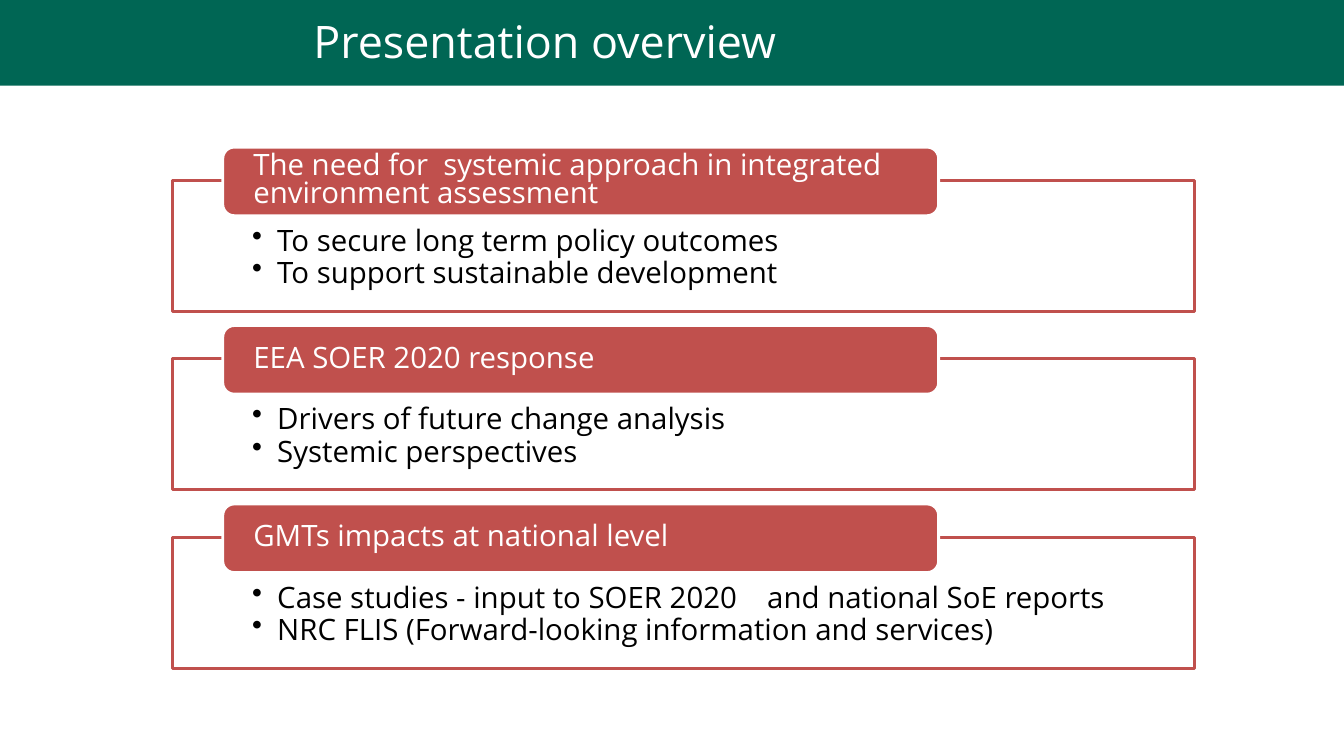
import pptx
import pptx.util
from lxml import etree
from pptx.dml.color import RGBColor
from pptx.enum.shapes import MSO_SHAPE
from pptx.enum.text import MSO_ANCHOR, MSO_AUTO_SIZE, PP_ALIGN
from pptx.oxml.ns import qn
from pptx.util import Inches

GREEN = RGBColor(0x00, 0x66, 0x54)
RED = RGBColor(0xC0, 0x50, 0x4D)
WHITE = RGBColor(0xFF, 0xFF, 0xFF)
BLACK = RGBColor(0x00, 0x00, 0x00)
FONT = "Open Sans"

FIRST_TOP = 1.79
SECTION_PITCH = 1.77
LABEL_RISE = 0.33

SECTIONS = [
    ("The need for  systemic approach in integrated environment assessment",
     ["To secure long term policy outcomes",
      "To support sustainable development"]),
    ("EEA SOER 2020 response",
     ["Drivers of future change analysis",
      "Systemic perspectives"]),
    ("GMTs impacts at national level",
     ["Case studies - input to SOER 2020\tand national SoE reports",
      "NRC FLIS (Forward-looking information and services)"]),
]


def set_attributes(target, values):
    for name, value in values.items():
        setattr(target, name, value)


def add_panel(slide, kind, box, fill, line=None):
    shape = slide.shapes.add_shape(kind, *map(Inches, box))
    shape.shadow.inherit = False
    shape.fill.solid()
    shape.fill.fore_color.rgb = fill
    if line is None:
        shape.line.fill.background()
    else:
        shape.line.color.rgb = line
        shape.line.width = pptx.util.Pt(2)
    return shape


def set_frame(shape, anchor, insets):
    sides = ("margin_left", "margin_top", "margin_right", "margin_bottom")
    set_attributes(shape.text_frame, {
        "word_wrap": True,
        "vertical_anchor": anchor,
        **dict(zip(sides, map(Inches, insets))),
    })


def add_bullet(paragraph, tab_position):
    properties = paragraph._p.get_or_add_pPr()
    properties.set("marL", str(Inches(0.25)))
    properties.set("indent", str(Inches(-0.25)))
    etree.SubElement(properties, qn("a:buChar"), char="•")
    if "\t" in paragraph.text:
        tabs = etree.SubElement(properties, qn("a:tabLst"))
        etree.SubElement(tabs, qn("a:tab"), pos=str(Inches(tab_position)), algn="l")


def write_lines(shape, lines, size, color, spacing=None, space_after=0, bullets=False):
    frame = shape.text_frame
    for index, text in enumerate(lines):
        paragraph = frame.paragraphs[0] if index == 0 else frame.add_paragraph()
        paragraph.text = text
        set_attributes(paragraph, {
            "alignment": PP_ALIGN.LEFT,
            "line_spacing": spacing,
            "space_after": pptx.util.Pt(space_after),
        })
        if bullets:
            add_bullet(paragraph, 5.11)
        for run in paragraph.runs:
            set_attributes(run.font, {"name": FONT, "size": pptx.util.Pt(size)})
            run.font.color.rgb = color


def add_header(slide):
    add_panel(slide, MSO_SHAPE.RECTANGLE, (0, 0, 13.33, 0.85), GREEN)
    title = slide.shapes.add_textbox(*map(Inches, (3.01, 0.09, 5.35, 0.64)))
    set_frame(title, MSO_ANCHOR.TOP, (0.1, 0.05, 0.1, 0.05))
    title.text_frame.auto_size = MSO_AUTO_SIZE.SHAPE_TO_FIT_TEXT
    write_lines(title, ["Presentation overview"], 32, WHITE)


def add_section(slide, top, heading, points):
    # Outlined box with the bullet points
    body = add_panel(slide, MSO_SHAPE.RECTANGLE, (1.71, top, 10.14, 1.3), WHITE, RED)
    set_frame(body, MSO_ANCHOR.TOP, (0.79, 0.48, 0.79, 0.16))
    write_lines(body, points, 21, BLACK, spacing=0.8, space_after=3, bullets=True)

    # Heading label across the top edge
    label = add_panel(slide, MSO_SHAPE.ROUNDED_RECTANGLE,
                      (2.21, top - LABEL_RISE, 7.1, 0.68), RED, WHITE)
    set_frame(label, MSO_ANCHOR.MIDDLE, (0.27, 0, 0.27, 0))
    write_lines(label, [heading], 21, WHITE, spacing=0.8)


def main():
    presentation = pptx.Presentation()
    presentation.slide_width = Inches(13.33)
    presentation.slide_height = Inches(7.5)
    slide = presentation.slides.add_slide(presentation.slide_layouts[6])

    add_header(slide)
    for index, (heading, points) in enumerate(SECTIONS):
        add_section(slide, FIRST_TOP + index * SECTION_PITCH, heading, points)

    presentation.save("out.pptx")


if __name__ == "__main__":
    main()
